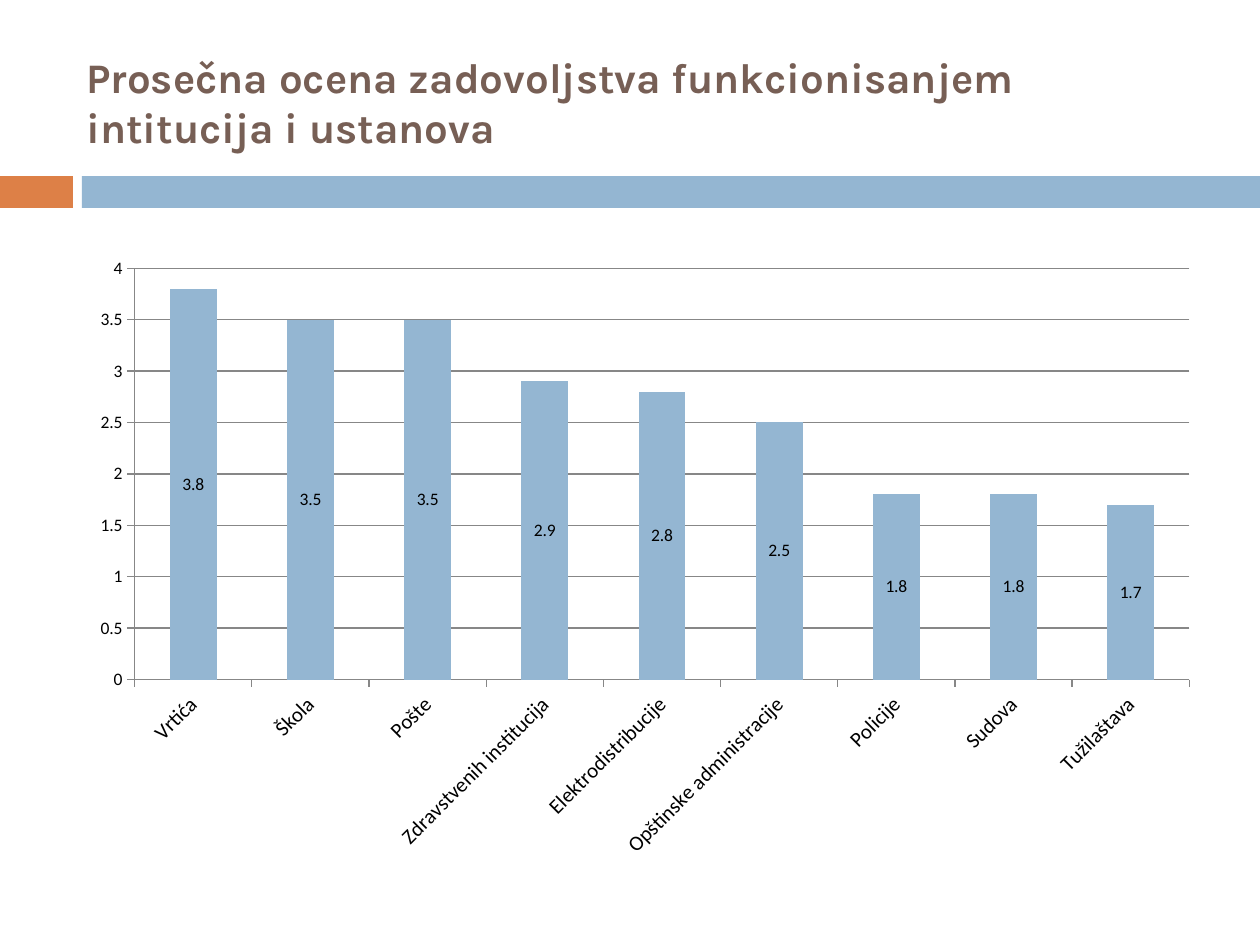
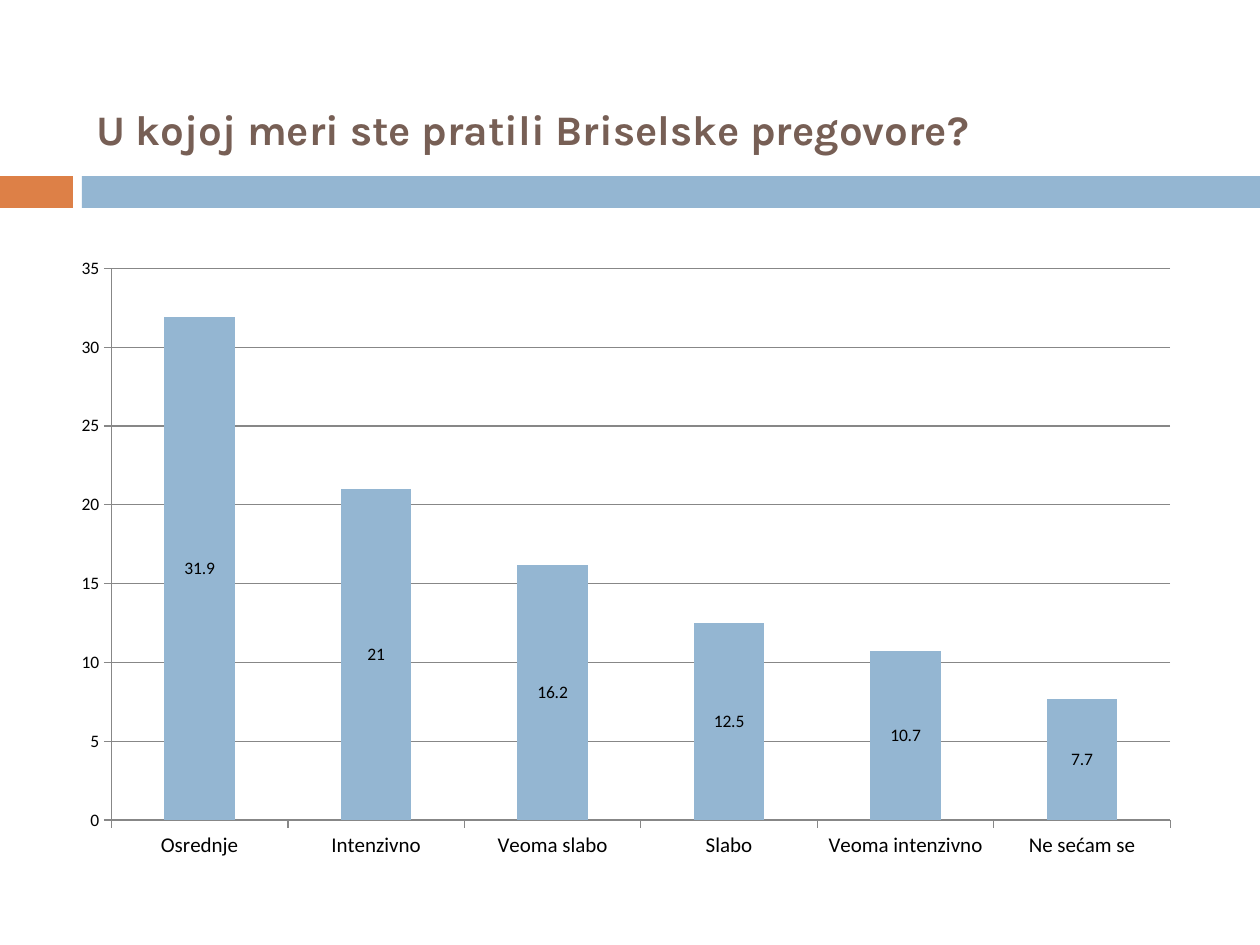
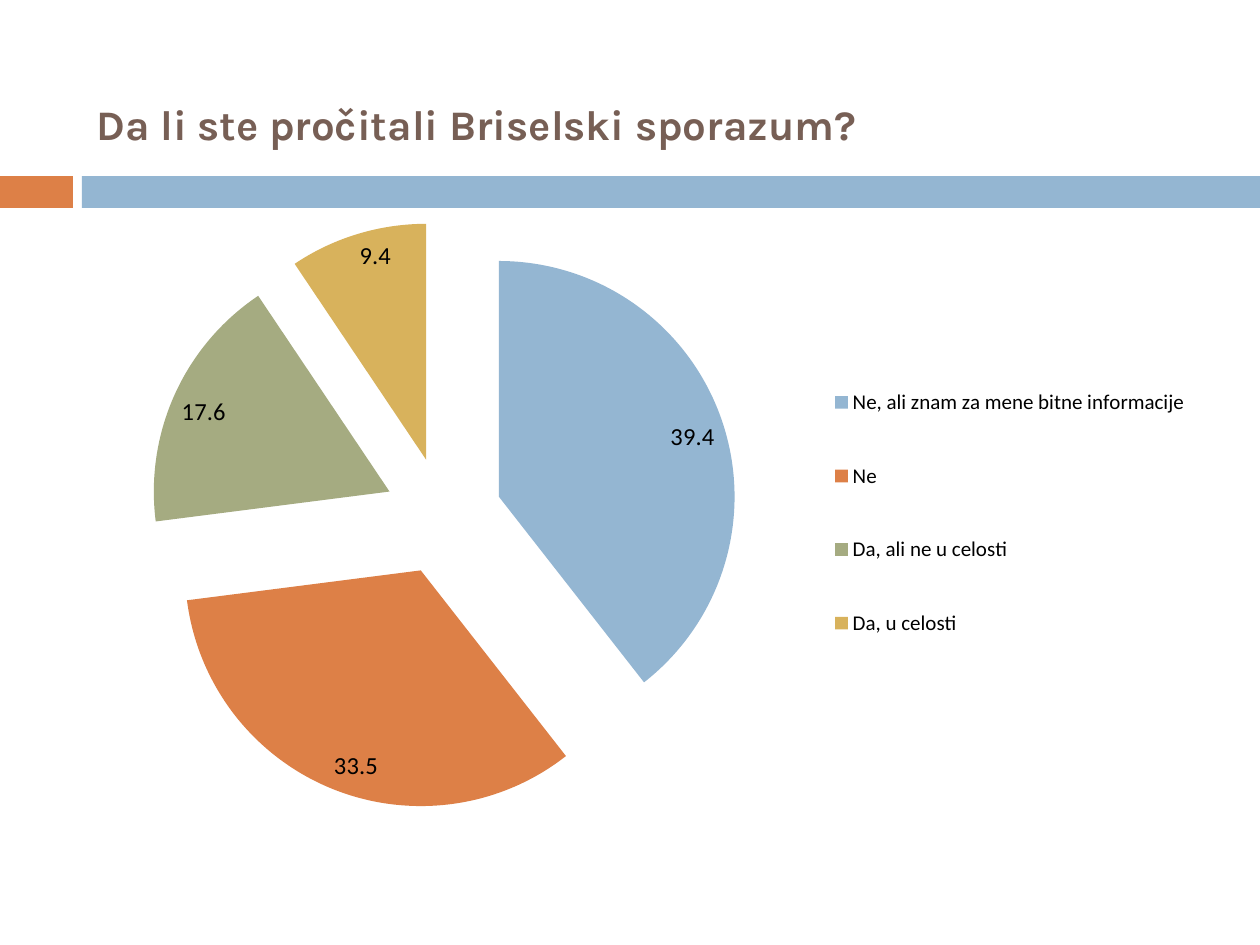
from lxml import etree
from pptx import Presentation
from pptx import util as u
from pptx.chart.data import CategoryChartData
from pptx.dml.color import RGBColor
from pptx.enum import chart as ch
from pptx.enum import shapes, text

PX = 914400 / 126
COLORS = {
    "blue": "94B6D2",
    "orange": "DD8047",
    "green": "A5AB81",
    "gold": "D8B25C",
    "title": "775F55",
    "text": "000000",
    "line": "878787",
    "bg": "FFFFFF",
}
TITLE_FONT = "Karla"
CHART_FONT = "Calibri"


def rgb(name):
    return RGBColor.from_string(COLORS[name])


def style_font(font, size, color="text", name=CHART_FONT, bold=False):
    font.size = u.Pt(size)
    font.name = name
    font.bold = bold
    font.color.rgb = rgb(color)


def write_text(tf, content, **fmt):
    p = tf.paragraphs[0]
    p.alignment = text.PP_ALIGN.LEFT
    r = p.add_run()
    r.text = content
    style_font(r.font, **fmt)


class Deck:
    def __init__(self):
        self.prs = Presentation()
        self.prs.slide_width = u.Inches(10)
        self.prs.slide_height = u.Inches(7.5)
        self.s = None

    def box(self, *lengths):
        return [u.Emu(round(n * PX)) for n in lengths]

    def slide(self, title, title_box):
        self.s = self.prs.slides.add_slide(self.prs.slide_layouts[6])
        self.s.background.fill.solid()
        self.s.background.fill.fore_color.rgb = rgb("bg")
        self.band(0, 73, "orange")
        self.band(82, 1178, "blue")
        self.title(title, title_box)

    def band(self, x, w, color):
        sp = self.s.shapes.add_shape(shapes.MSO_SHAPE.RECTANGLE, *self.box(x, 176, w, 32))
        sp.shadow.inherit = False
        sp.fill.solid()
        sp.fill.fore_color.rgb = rgb(color)
        sp.line.fill.background()

    def title(self, content, title_box):
        tf = self.s.shapes.add_textbox(*self.box(*title_box)).text_frame
        tf.word_wrap = True
        tf.vertical_anchor = text.MSO_ANCHOR.MIDDLE
        write_text(tf, content, size=24, color="title", name=TITLE_FONT, bold=True)

    def chart(self, kind, chart_box, values, label_size):
        data = CategoryChartData()
        data.categories = list(values)
        data.add_series("Series 1", list(values.values()))
        chart = self.s.shapes.add_chart(kind, *self.box(*chart_box), data).chart
        chart.has_title = False
        chart.has_legend = False
        style_font(chart.font, 10)
        plot = chart.plots[0]
        plot.has_data_labels = True
        plot.data_labels.show_value = True
        style_font(plot.data_labels.font, label_size)
        return chart, plot

    def columns(self, chart_box, values, top, step, rotation=0):
        chart, plot = self.chart(ch.XL_CHART_TYPE.COLUMN_STACKED, chart_box, values, 10)
        plot.vary_by_categories = False
        plot.gap_width = 150
        plot.overlap = 100
        fill = plot.series[0].format.fill
        fill.solid()
        fill.fore_color.rgb = rgb("blue")
        cat, val = chart.category_axis, chart.value_axis
        for axis, size in ((cat, 12), (val, 10)):
            axis.major_tick_mark = ch.XL_TICK_MARK.OUTSIDE
            axis.minor_tick_mark = ch.XL_TICK_MARK.NONE
            axis.format.line.color.rgb = rgb("line")
            style_font(axis.tick_labels.font, size)
        if rotation:
            body = cat._element.txPr.bodyPr
            body.set("rot", str(rotation * 60000))
            body.set("vert", "horz")
        val.minimum_scale = 0
        val.maximum_scale = top
        val.major_unit = step
        val.has_major_gridlines = True
        val.major_gridlines.format.line.color.rgb = rgb("line")

    def pie(self, chart_box, values, colors, legend_area):
        chart, plot = self.chart(ch.XL_CHART_TYPE.PIE, chart_box, values, 14)
        plot.vary_by_categories = True
        plot.data_labels.position = ch.XL_LABEL_POSITION.INSIDE_END
        series = plot.series[0]
        for i, color in enumerate(colors):
            fill = series.points[i].format.fill
            fill.solid()
            fill.fore_color.rgb = rgb(color)
        explosion = etree.Element(series._element.tag.replace("}ser", "}explosion"), val="25")
        series._element.find("{*}dPt").addprevious(explosion)
        chart.has_legend = True
        legend = chart.legend
        legend.position = ch.XL_LEGEND_POSITION.RIGHT
        legend.include_in_layout = False
        style_font(legend.font, 12)
        self.place_legend(legend, legend_area)

    def place_legend(self, legend, area):
        root = legend._element
        ns = root.tag.replace("legend", "")
        layout = root.find(ns + "layout")
        if layout is None:
            layout = etree.Element(ns + "layout")
            root.find(ns + "legendPos").addnext(layout)
        manual = etree.SubElement(layout, ns + "manualLayout")
        for key in ("xMode", "yMode"):
            etree.SubElement(manual, ns + key, val="edge")
        for key, share in zip("xywh", area):
            etree.SubElement(manual, ns + key, val=str(share))


def main():
    deck = Deck()

    deck.slide("Prosečna ocena zadovoljstva funkcionisanjem intitucija i ustanova", (74, 0, 1134, 204))
    satisfaction = {
        "Vrtića": 3.8,
        "Škola": 3.5,
        "Pošte": 3.5,
        "Zdravstvenih institucija": 2.9,
        "Elektrodistribucije": 2.8,
        "Opštinske administracije": 2.5,
        "Policije": 1.8,
        "Sudova": 1.8,
        "Tužilaštava": 1.7,
    }
    deck.columns((78, 246, 1134, 624), satisfaction, top=4, step=0.5, rotation=-45)

    deck.slide("U kojoj meri ste pratili Briselske pregovore?", (84, 32, 1124, 193))
    following = {
        "Osrednje": 31.9,
        "Intenzivno": 21,
        "Veoma slabo": 16.2,
        "Slabo": 12.5,
        "Veoma intenzivno": 10.7,
        "Ne sećam se": 7.7,
    }
    deck.columns((59, 246, 1134, 624), following, top=35, step=5)

    deck.slide("Da li ste pročitali Briselski sporazum?", (84, 32, 1124, 183))
    reading = {
        "Ne, ali znam za mene bitne informacije": 39.4,
        "Ne": 33.5,
        "Da, ali ne u celosti": 17.6,
        "Da, u celosti": 9.4,
    }
    deck.pie((63, 204, 1134, 624), reading, ("blue", "orange", "green", "gold"), (0.67, 0.22, 0.33, 0.55))

    deck.prs.save("out.pptx")


if __name__ == "__main__":
    main()
